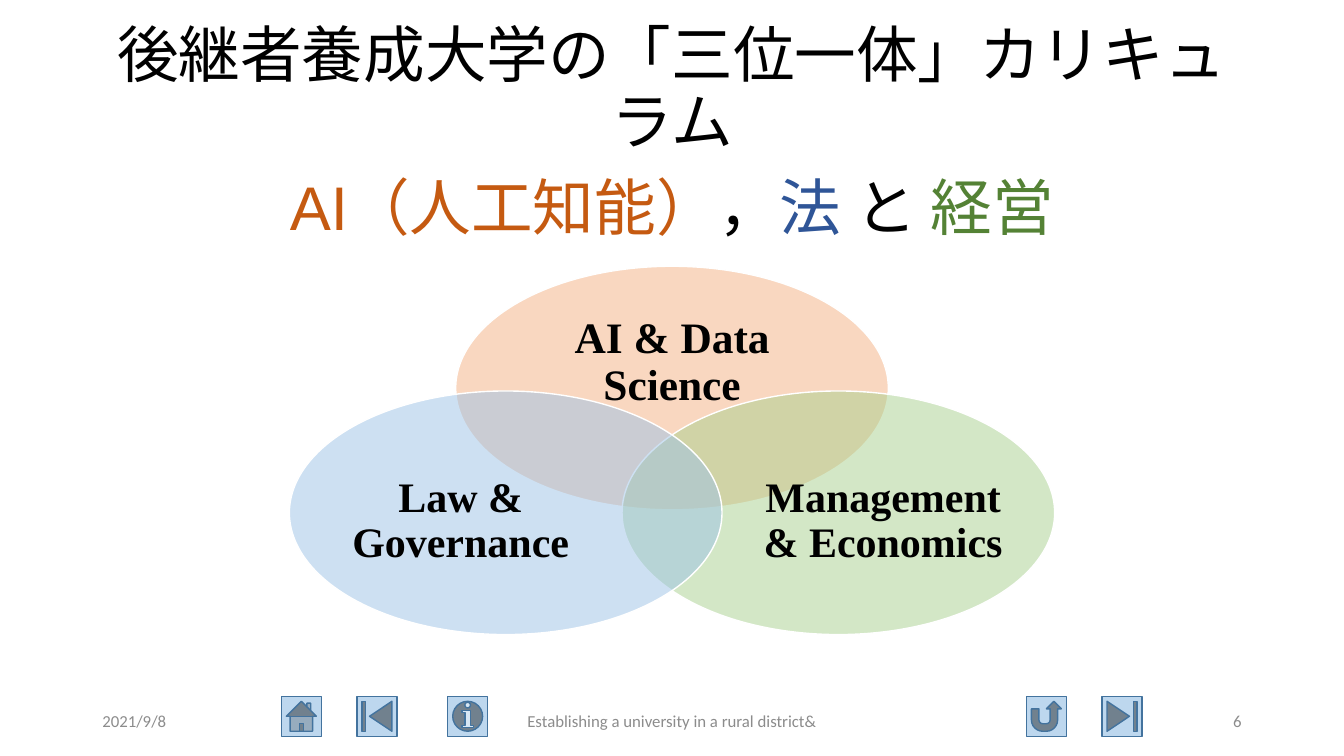
from lxml.etree import SubElement
from pptx import Presentation
from pptx.dml.color import RGBColor
from pptx.enum.lang import MSO_LANGUAGE_ID as Language
from pptx.enum.shapes import MSO_SHAPE as Shape
from pptx.enum.text import MSO_ANCHOR as Anchor, PP_ALIGN as Align
from pptx.oxml.ns import qn
from pptx.util import Inches, Pt

COLORS = {
    "black": "000000", "white": "FFFFFF", "gray": "8C8C8C",
    "orange": "C55A11", "blue": "2F5597", "green": "548235",
    "pale orange": "F4B183", "pale blue": "9DC3E6", "pale green": "A9D18E",
    "button": "BDD7EE", "button line": "43739E",
}
COLUMNS, ROWS = 160, 90
WIDTH, HEIGHT = Inches(13.333), Inches(7.5)


def color(name):
    return RGBColor.from_string(COLORS[name])


def grid(left, top, columns, rows):
    """Turn grid cells into a left, top, width, height on the slide."""
    return (round(left * WIDTH / COLUMNS), round(top * HEIGHT / ROWS),
            round(columns * WIDTH / COLUMNS), round(rows * HEIGHT / ROWS))


def centered(x, y, columns, rows):
    return grid(x - columns / 2, y - rows / 2, columns, rows)


def add_text(slide, box, paragraphs, font, size, align=Align.CENTER,
             bold=False, inset=True, spacing=1.0, gap=0, language=None):
    """Each paragraph is a list of (text, colour name) runs."""
    frame = slide.shapes.add_textbox(*box).text_frame
    frame.word_wrap = True
    frame.vertical_anchor = Anchor.MIDDLE
    if not inset:
        frame.margin_left = frame.margin_right = 0
        frame.margin_top = frame.margin_bottom = 0
    for index, runs in enumerate(paragraphs):
        paragraph = frame.add_paragraph() if index else frame.paragraphs[0]
        paragraph.alignment = align
        paragraph.line_spacing = spacing
        paragraph.space_before = Pt(gap if index else 0)
        for text, color_name in runs:
            run = paragraph.add_run()
            run.text = text
            run.font.name = font
            run.font.size = Pt(size)
            run.font.bold = bold
            run.font.color.rgb = color(color_name)
            if language:
                run.font.language_id = language


def add_filled_shape(slide, kind, box, fill, line, opacity=100):
    shape = slide.shapes.add_shape(kind, *box)
    shape.shadow.inherit = False
    shape.fill.solid()
    shape.fill.fore_color.rgb = color(fill)
    shape.line.color.rgb = color(line)
    shape.line.width = Pt(1)
    if opacity < 100:
        fill_color = shape._element.spPr.find(qn("a:solidFill"))[0]
        SubElement(fill_color, qn("a:alpha"), val=str(opacity * 1000))


def add_navigation(slide):
    buttons = [
        (33.5, Shape.ACTION_BUTTON_HOME),
        (42.5, Shape.ACTION_BUTTON_BEGINNING),
        (122.2, Shape.ACTION_BUTTON_RETURN),
        (131.2, Shape.ACTION_BUTTON_END),
        (53.3, Shape.ACTION_BUTTON_INFORMATION),
    ]
    for left, kind in buttons:
        add_filled_shape(slide, kind, grid(left, 82.9, 4.75, 4.75),
                         "button", "button line")


def add_title(slide):
    paragraphs = [
        [("後継者養成大学の「三位一体」カリキュラム", "black")],
        [("AI（人工知能）", "orange"), ("，", "black"), ("法 ", "blue"),
         ("と ", "black"), ("経営", "green")],
    ]
    add_text(slide, grid(11, 4.8, 138, 22.3), paragraphs, "Arial", 44,
             spacing=0.9, gap=14, language=Language.JAPANESE)


def add_footer(slide):
    footers = [
        (11, 36, "2021/9/8", Align.LEFT),
        (53, 54, "Establishing a university in a rural district&", Align.CENTER),
        (113, 36, "6", Align.RIGHT),
    ]
    for left, columns, text, align in footers:
        add_text(slide, grid(left, 83.4, columns, 4.8), [[(text, "gray")]],
                 "Calibri", 12, align)


def add_venn(slide):
    center, spread, label_shift = COLUMNS / 2, 19.8, 5.35
    # side, ellipse y, fill, label, label y, label columns, label rows, size
    circles = [
        (0, 46.2, "pale orange", "AI & Data Science", 43.25, 37.8, 13.1, 31),
        (1, 61.05, "pale green", "Management & Economics", 62.1, 31, 16, 30),
        (-1, 61.05, "pale blue", "Law & Governance", 62.1, 31, 16, 30),
    ]
    for side, y, fill, label, label_y, columns, rows, size in circles:
        x = center + side * spread
        add_filled_shape(slide, Shape.OVAL, centered(x, y, 51.5, 29),
                         fill, "white", opacity=50)
        add_text(slide, centered(x + side * label_shift, label_y, columns, rows),
                 [[(label, "black")]], "Times New Roman", size,
                 bold=True, inset=False, spacing=0.9)


def main():
    presentation = Presentation()
    presentation.slide_width, presentation.slide_height = WIDTH, HEIGHT
    slide = presentation.slides.add_slide(presentation.slide_layouts[6])
    add_navigation(slide)
    add_title(slide)
    add_footer(slide)
    add_venn(slide)
    presentation.save("out.pptx")


if __name__ == "__main__":
    main()
